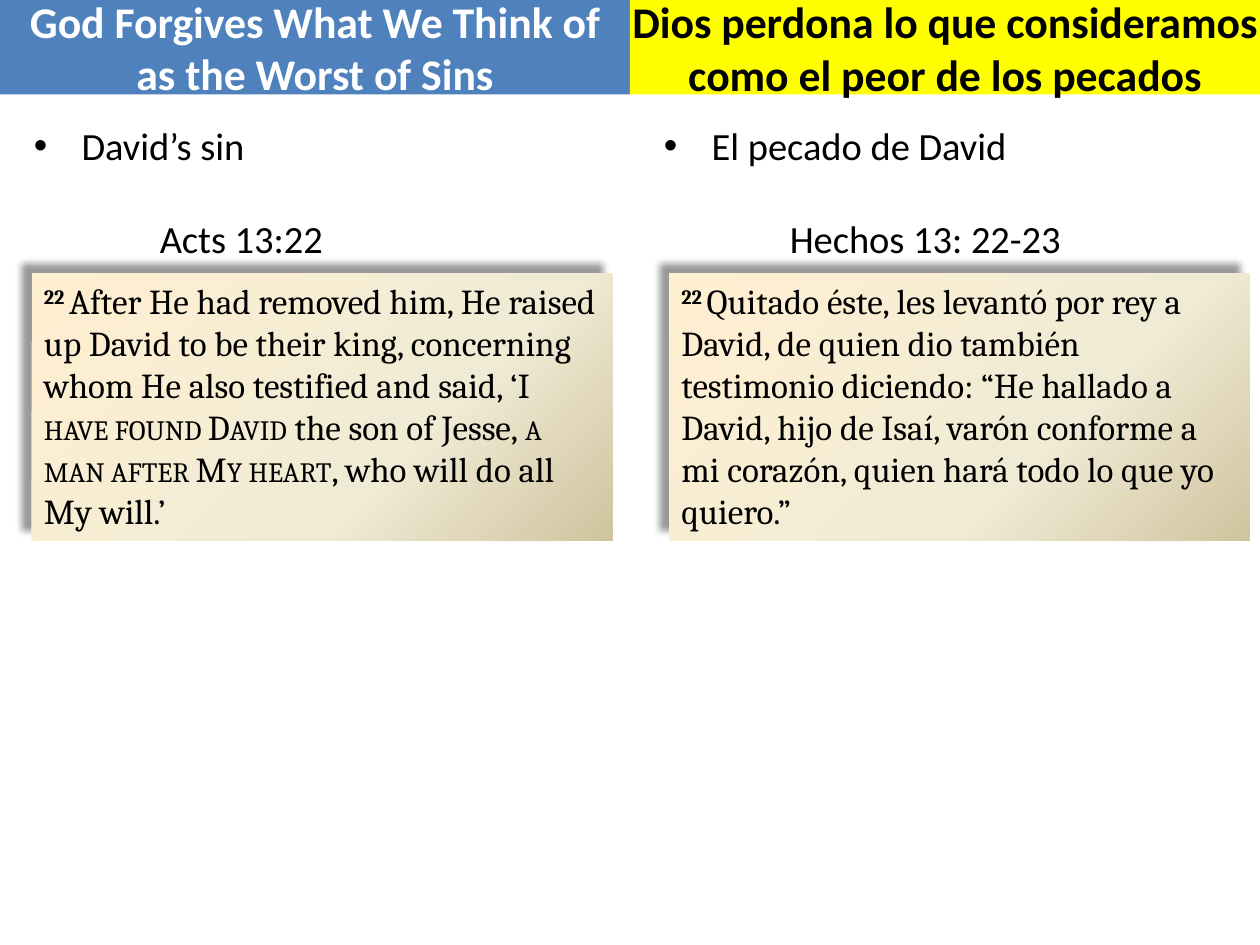
import dataclasses

import pptx
import pptx.dml.color
import pptx.enum.shapes
import pptx.enum.text
import pptx.oxml
import pptx.oxml.ns
import pptx.util

Inches = pptx.util.Inches
Pt = pptx.util.Pt
ANCHOR = pptx.enum.text.MSO_ANCHOR
ALIGN = pptx.enum.text.PP_ALIGN
RECTANGLE = pptx.enum.shapes.MSO_SHAPE.RECTANGLE

COLOURS = {
    "blue": "4F81BD",
    "yellow": "FFFF00",
    "white": "FFFFFF",
    "black": "000000",
    "parchment light": "FFEFD1",
    "parchment mid": "F0EBD5",
    "parchment dark": "D1C39F",
}
PARCHMENT_STOPS = ((0, "parchment light"), (65, "parchment mid"), (100, "parchment dark"))
NAMESPACE = pptx.oxml.ns.nsdecls("a")


@dataclasses.dataclass(frozen=True)
class Span:
    text: str
    small_caps: bool = False
    verse_number: bool = False


@dataclasses.dataclass(frozen=True)
class Column:
    left: float
    heading: str
    heading_fill: str
    heading_colour: str
    heading_margin: float
    topic: str
    reference: str
    outline_width: float
    verse_left: float
    verse: tuple[Span, ...]


COLUMNS = (
    Column(
        0, "God Forgives What We Think of as the Worst of Sins", "blue", "white", 0.1,
        "David’s sin", "Acts 13:22", 4.83, 0.25,
        (
            Span("22 ", verse_number=True),
            Span("After He had removed him, He raised up David to be their king, "
                 "concerning whom He also testified and said, ‘I "),
            Span("have found David", small_caps=True),
            Span(" the son of Jesse, "),
            Span("a man after My heart", small_caps=True),
            Span(", who will do all My will.’"),
        ),
    ),
    Column(
        5, "Dios perdona lo que consideramos como el peor de los pecados", "yellow", "black", 0,
        "El pecado de David", "Hechos 13: 22-23", 4.67, 5.31,
        (
            Span("22 ", verse_number=True),
            Span("Quitado éste, les levantó por rey a David, de quien dio también testimonio "
                 "diciendo: “He hallado a David, hijo de Isaí, varón conforme a mi corazón, "
                 "quien hará todo lo que yo quiero.”"),
        ),
    ),
)


def colour(name: str) -> pptx.dml.color.RGBColor:
    return pptx.dml.color.RGBColor.from_string(COLOURS[name])


def add_run(paragraph, text: str, size: float, font: str = "Calibri",
            colour_name: str = "black", bold: bool = False):
    run = paragraph.add_run()
    run.text = text
    run.font.size = Pt(size)
    run.font.name = font
    run.font.bold = bold
    run.font.color.rgb = colour(colour_name)
    return run


def format_heading(shape, column: Column) -> None:
    shape.left, shape.top = Inches(column.left), Inches(0)
    shape.width, shape.height = Inches(5), Inches(0.75)
    shape.shadow.inherit = False
    shape.fill.solid()
    shape.fill.fore_color.rgb = colour(column.heading_fill)
    shape.line.fill.background()
    frame = shape.text_frame
    frame.word_wrap = True
    frame.auto_size = pptx.enum.text.MSO_AUTO_SIZE.NONE
    frame.vertical_anchor = ANCHOR.MIDDLE
    frame.margin_left = frame.margin_right = Inches(column.heading_margin)
    paragraph = frame.paragraphs[0]
    paragraph.alignment = ALIGN.CENTER
    add_run(paragraph, column.heading, 25, colour_name=column.heading_colour, bold=True)


def add_outline(slide, column: Column) -> None:
    box = slide.shapes.add_textbox(
        Inches(column.left + 0.17), Inches(0.92), Inches(column.outline_width), Inches(1.21))
    frame = box.text_frame
    frame.word_wrap = True

    # Bulleted topic
    topic = frame.paragraphs[0]
    properties = topic._p.get_or_add_pPr()
    properties.set("marL", str(Inches(0.38)))
    properties.set("indent", str(-Inches(0.38)))
    for markup in ('<a:buFont {} typeface="Arial"/>', '<a:buChar {} char="•"/>'):
        properties.append(pptx.oxml.parse_xml(markup.format(NAMESPACE)))
    add_run(topic, column.topic, 22)

    # Indented reference, one line further down
    reference = frame.add_paragraph()
    reference.space_before = Pt(26.5)
    reference._p.get_or_add_pPr().set("marL", str(Inches(1)))
    add_run(reference, column.reference, 22)


def apply_parchment(shape) -> None:
    stops = "".join(
        f'<a:gs pos="{position * 1000}"><a:srgbClr val="{COLOURS[name]}"/></a:gs>'
        for position, name in PARCHMENT_STOPS)
    properties = shape._element.spPr
    properties.insert(2, pptx.oxml.parse_xml(
        f'<a:gradFill {NAMESPACE} rotWithShape="1"><a:gsLst>{stops}</a:gsLst>'
        f'<a:lin ang="{45 * 60000}" scaled="0"/></a:gradFill>'))
    shape.line.fill.background()
    shape.shadow.inherit = False
    effects = properties.find(pptx.oxml.ns.qn("a:effectLst"))
    effects.append(pptx.oxml.parse_xml(
        f'<a:outerShdw {NAMESPACE} blurRad="{Pt(4)}" dist="{Pt(8)}" dir="{225 * 60000}" '
        f'algn="br" rotWithShape="0"><a:srgbClr val="{COLOURS["black"]}">'
        '<a:alpha val="40000"/></a:srgbClr></a:outerShdw>'))


def add_verse(slide, column: Column) -> None:
    shape = slide.shapes.add_shape(
        RECTANGLE, Inches(column.verse_left), Inches(2.17), Inches(4.61), Inches(2.12))
    apply_parchment(shape)
    frame = shape.text_frame
    frame.word_wrap = True
    frame.vertical_anchor = ANCHOR.TOP
    paragraph = frame.paragraphs[0]
    paragraph.alignment = ALIGN.LEFT
    for span in column.verse:
        run = add_run(paragraph, span.text, 20, "Cambria", bold=span.verse_number)
        if span.verse_number:
            run.font._element.set("baseline", "30000")
        if span.small_caps:
            run.font._element.set("cap", "small")


def main() -> None:
    presentation = pptx.Presentation()
    presentation.slide_width, presentation.slide_height = Inches(10), Inches(7.5)
    slide = presentation.slides.add_slide(presentation.slide_layouts[5])

    # Headings: the title on the left, its translation on the right
    english, spanish = COLUMNS
    format_heading(slide.shapes.title, english)
    translation = slide.shapes.add_shape(RECTANGLE, 0, 0, Inches(5), Inches(0.75))
    format_heading(translation, spanish)

    # Outline and verse of each language
    for column in COLUMNS:
        add_outline(slide, column)
        add_verse(slide, column)

    presentation.save("out.pptx")


if __name__ == "__main__":
    main()
